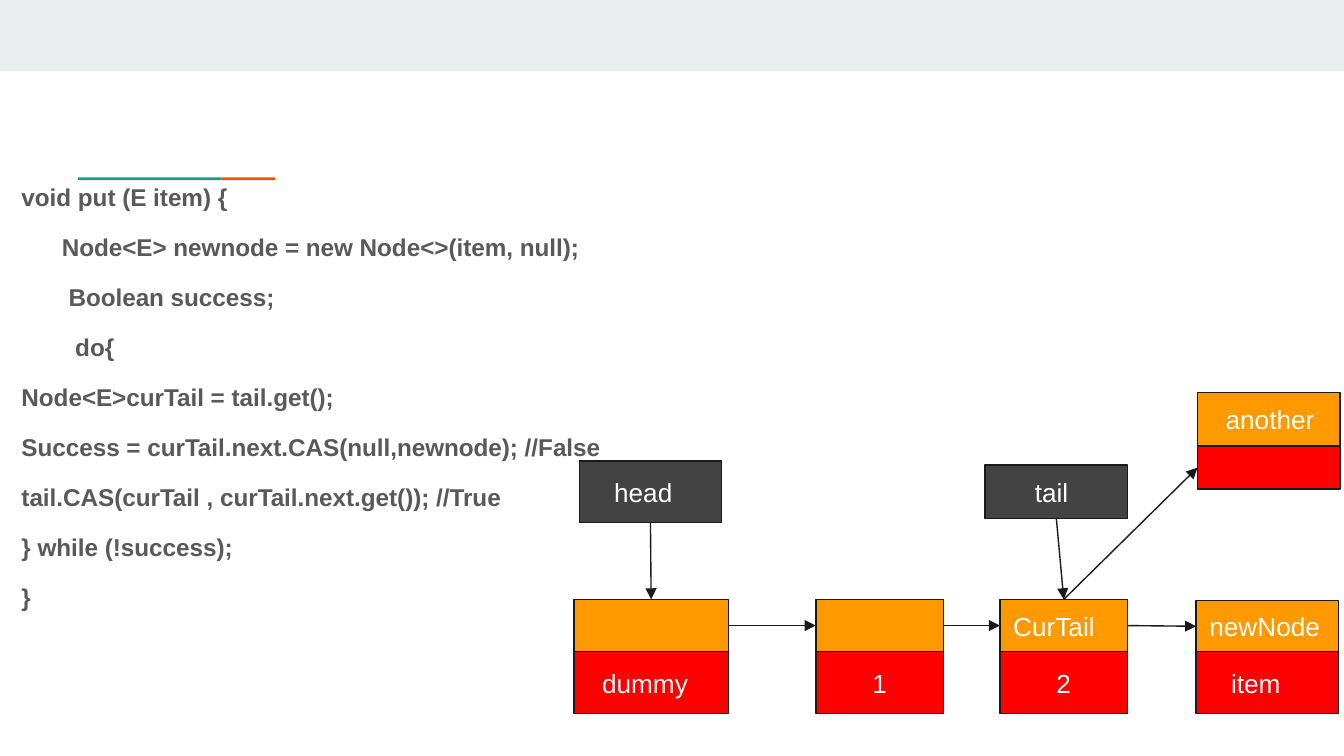
from lxml import etree
from pptx import Presentation
from pptx.dml.color import RGBColor
from pptx.enum.shapes import MSO_CONNECTOR, MSO_SHAPE
from pptx.enum.text import MSO_ANCHOR, MSO_AUTO_SIZE, PP_ALIGN
from pptx.oxml.ns import qn
from pptx.util import Inches, Pt

RECTANGLE = MSO_SHAPE.RECTANGLE
STRAIGHT = MSO_CONNECTOR.STRAIGHT
MIDDLE, TOP_ANCHOR = MSO_ANCHOR.MIDDLE, MSO_ANCHOR.TOP
LEFT_ALIGN = PP_ALIGN.LEFT
NO_AUTOFIT = MSO_AUTO_SIZE.NONE
TOP, LEFT, BOTTOM, RIGHT = range(4)

COLORS = {
    "band": "E9EDEE", "teal": "1A9988", "orange": "EB5600", "code": "595959",
    "reference": "434343", "pointer": "FF9900", "value": "FF0000",
    "outline": "1A1A1A", "label": "FFFFFF",
}
FONT = "Arial"
COLUMNS, ROWS = 100, 56.25
CELL = Inches(10) / COLUMNS

CODE = [
    ("void put (E item) {", 0),
    ("Node<E> newnode = new Node<>(item, null);", 3),
    ("Boolean success;", 3.5),
    ("do{", 4),
    ("Node<E>curTail = tail.get();", 0),
    ("Success = curTail.next.CAS(null,newnode); //False", 0),
    ("tail.CAS(curTail , curTail.next.get()); //True", 0),
    ("} while (!success);", 0),
    ("}", 0),
]


def grid(cells):
    """Convert a number of grid cells to a length."""
    return round(cells * CELL)


def color(name):
    """Look up a named colour."""
    return RGBColor.from_string(COLORS[name])


def add_text(paragraph, text, size, color_name, bold=False):
    """Add one formatted run to a paragraph."""
    run = paragraph.add_run()
    run.text = text
    run.font.name = FONT
    run.font.size = Pt(size)
    run.font.bold = bold
    run.font.color.rgb = color(color_name)


def set_frame(frame, anchor, indent=0):
    """Set the insets, wrapping and anchor of a text frame."""
    frame.word_wrap = True
    frame.auto_size = NO_AUTOFIT
    frame.vertical_anchor = anchor
    frame.margin_top = frame.margin_right = frame.margin_bottom = grid(1)
    frame.margin_left = grid(1 + indent)


def add_bar(slide, box, fill):
    """Add a plain filled rectangle."""
    shape = slide.shapes.add_shape(RECTANGLE, *map(grid, box))
    shape.shadow.inherit = False
    shape.fill.solid()
    shape.fill.fore_color.rgb = color(fill)
    shape.line.fill.background()
    return shape


def add_cell(slide, box, fill, label="", indent=0):
    """Add an outlined rectangle with an optional indented label."""
    shape = add_bar(slide, box, fill)
    shape.line.color.rgb = color("outline")
    shape.line.width = Pt(0.75)
    if label:
        set_frame(shape.text_frame, MIDDLE, indent)
        paragraph = shape.text_frame.paragraphs[0]
        paragraph.alignment = LEFT_ALIGN
        add_text(paragraph, label, 14, "label")
    return shape


def add_node(slide, box, split, pointer=("", 0), value=("", 0)):
    """Add a list node: a pointer cell above a value cell."""
    left, top, width, height = box
    upper = add_cell(slide, (left, top, width, split), "pointer", *pointer)
    lower = add_cell(slide, (left, top + split, width, height - split), "value", *value)
    return upper, lower


def add_arrow(slide, start, start_side, end, end_side):
    """Join two shapes with an arrow."""
    arrow = slide.shapes.add_connector(STRAIGHT, 0, 0, 0, 0)
    arrow.begin_connect(start, start_side)
    arrow.end_connect(end, end_side)
    arrow.line.color.rgb = color("outline")
    arrow.line.width = Pt(0.75)
    line = arrow._element.spPr.find(qn("a:ln"))
    etree.SubElement(line, qn("a:tailEnd"), type="triangle")
    etree.SubElement(arrow._element.spPr, qn("a:effectLst"))


def add_header(slide, box):
    """Add the top band and the two-colour accent line below it."""
    left, top, width, height = box
    add_bar(slide, (left, top, width, 5.3), "band")
    line_top = top + height - 0.2
    add_bar(slide, (left + 5.8, line_top, 10.7, 0.2), "teal")
    add_bar(slide, (left + 16.5, line_top, 4, 0.2), "orange")


def add_code(slide, box):
    """Fill the body placeholder with the code lines."""
    body = slide.placeholders[1]
    body.left, body.top, body.width, body.height = map(grid, box)
    frame = body.text_frame
    set_frame(frame, TOP_ANCHOR)
    for index, (text, indent) in enumerate(CODE):
        paragraph = frame.add_paragraph() if index else frame.paragraphs[0]
        paragraph.line_spacing = 0.95
        paragraph.space_before = Pt(12 if index else 0)
        paragraph.space_after = Pt(0)
        properties = paragraph._p.get_or_add_pPr()
        properties.set("marL", str(grid(indent)))
        properties.set("indent", "0")
        etree.SubElement(properties, qn("a:buNone"))
        add_text(paragraph, text, 13, "code", bold=True)


def add_queue(slide, box):
    """Draw the linked queue with its head and tail references."""
    left, top, width, height = box
    row, node_height = top + 15.4, height - 15.4
    head = add_cell(slide, (left + 0.4, top + 5.1, 10.6, 4.6), "reference", "head", 1.6)
    tail = add_cell(slide, (left + 30.6, top + 5.4, 10.6, 4), "reference", "tail", 2.7)
    dummy, _ = add_node(slide, (left, row, 11.5, node_height), 3.9, value=("dummy", 1.1))
    first, _ = add_node(slide, (left + 18, row, 9.5, node_height), 3.9, value=("1", 3.2))
    current, _ = add_node(slide, (left + 31.7, row, 9.5, node_height), 3.9,
                          ("CurTail", 0), ("2", 3.2))
    new, _ = add_node(slide, (left + 46.3, row + 0.1, 10.6, node_height - 0.1), 3.8,
                      ("newNode", 0), ("item", 1.6))
    _, another = add_node(slide, (left + width - 10.6, top, 10.6, 7.2), 4, ("another", 1.1))
    add_arrow(slide, head, BOTTOM, dummy, TOP)
    add_arrow(slide, tail, BOTTOM, current, TOP)
    for start, end in ((dummy, first), (first, current), (current, new)):
        add_arrow(slide, start, RIGHT, end, LEFT)
    add_arrow(slide, current, TOP, another, LEFT)


def main():
    """Build and save the slide."""
    presentation = Presentation()
    presentation.slide_width, presentation.slide_height = grid(COLUMNS), grid(ROWS)
    slide = presentation.slides.add_slide(presentation.slide_layouts[1])
    title = slide.shapes.title._element
    title.getparent().remove(title)
    add_header(slide, (0, 0, COLUMNS, 13.4))
    add_code(slide, (0.6, 12.7, 99.4, 42.7))
    add_queue(slide, (42.7, 29.2, 57, 23.9))
    presentation.save("out.pptx")


if __name__ == "__main__":
    main()
